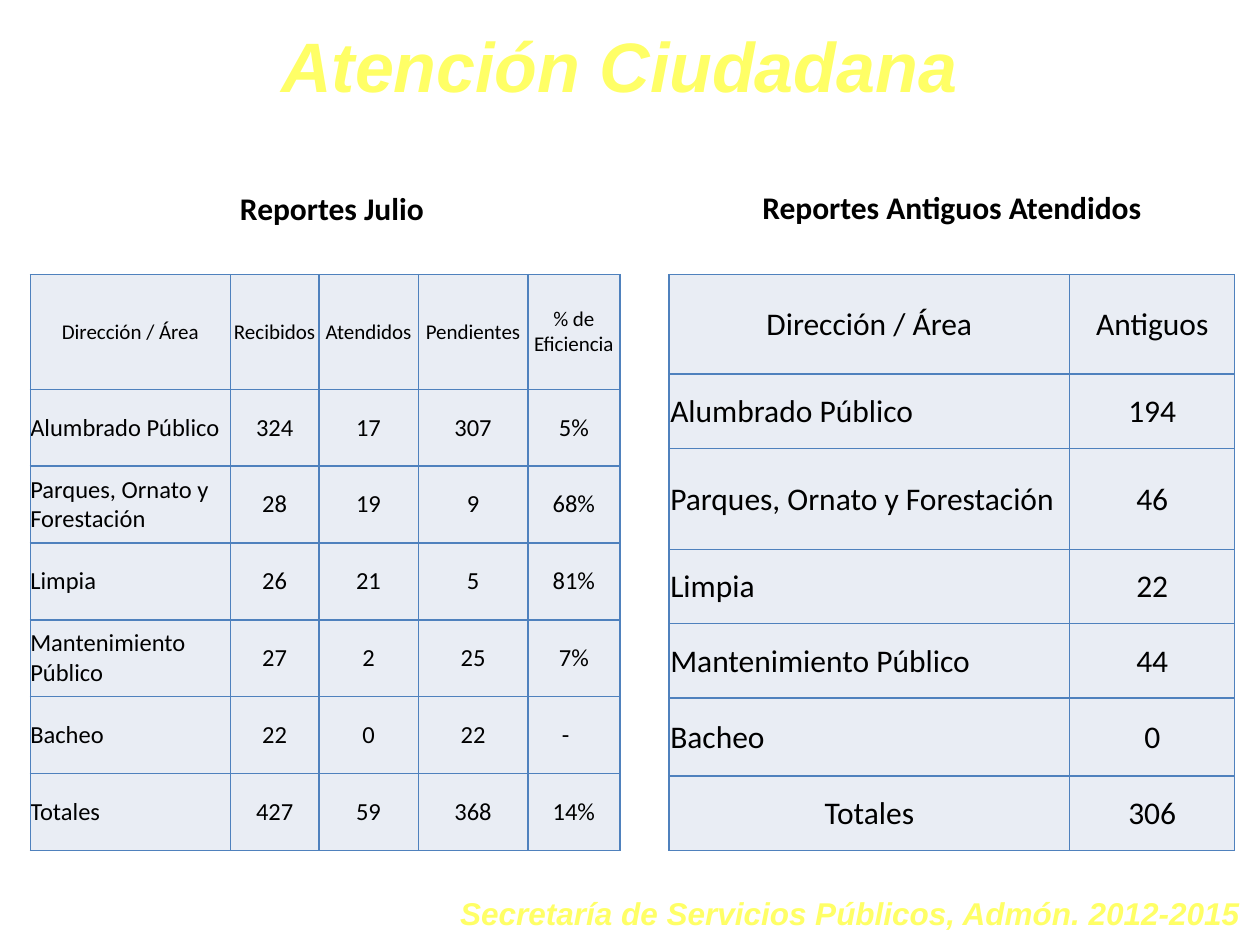
from lxml.etree import SubElement
from pptx import Presentation
from pptx.dml.color import RGBColor
from pptx.enum.text import MSO_ANCHOR, MSO_AUTO_SIZE, PP_ALIGN
from pptx.oxml.ns import qn
from pptx.util import Inches, Pt

COLORS = {"banner": "FFFF66", "text": "000000", "cell": "E9EDF4", "border": "4F81BD"}
BANNER = {"font": "Arial", "color": "banner", "bold": True, "italic": True}
HEADING = {"size": 18, "bold": True}

TEXTS = [
    ("Secretaría de Servicios Públicos, Admón. 2012-2015",
     (3.52, 7.05, 6.45, 0.4), False, {**BANNER, "size": 18}),
    ("Atención Ciudadana", (0.84, 0.13, 8.15, 0.77), True, {**BANNER, "size": 40}),
    ("Reportes Julio", (0.56, 1.45, 4.15, 0.4), True, HEADING),
    ("Reportes Antiguos Atendidos", (5.48, 1.44, 4.15, 0.4), True, HEADING),
]

JULY = {
    "at": (0.24, 2.18),
    "columns": [1.59, 0.7, 0.79, 0.87, 0.73],
    "heights": [0.91] + [0.61] * 6,
    "margins": (0, 0, 0, 0),
    "header_size": 12,
    "body_size": 14,
    "centered_labels": ["Dirección / Área"],
    "rows": [
        ("Dirección / Área", "Recibidos", "Atendidos", "Pendientes", "% de Eficiencia"),
        ("Alumbrado Público", "324", "17", "307", "5%"),
        ("Parques, Ornato y Forestación", "28", "19", "9", "68%"),
        ("Limpia", "26", "21", "5", "81%"),
        ("Mantenimiento Público", "27", "2", "25", "7%"),
        ("Bacheo", "22", "0", "22", "-"),
        ("Totales", "427", "59", "368", "14%"),
    ],
}
OLDER = {
    "at": (5.31, 2.18),
    "columns": [3.18, 1.31],
    "heights": [0.79, 0.59, 0.8, 0.59, 0.59, 0.62, 0.59],
    "margins": (0.01, 0.01, 0.01, 0),
    "header_size": 18,
    "body_size": 18,
    "centered_labels": ["Dirección / Área", "Totales"],
    "rows": [
        ("Dirección / Área", "Antiguos"),
        ("Alumbrado Público", "194"),
        ("Parques, Ornato y Forestación", "46"),
        ("Limpia", "22"),
        ("Mantenimiento Público", "44"),
        ("Bacheo", "0"),
        ("Totales", "306"),
    ],
}
DASH_MARGIN = 0.13


def write(frame, text, size, font="Calibri", color="text", bold=False,
          italic=False, align=PP_ALIGN.CENTER):
    paragraph = frame.paragraphs[0]
    paragraph.alignment = align
    run = paragraph.add_run()
    run.text = text
    run.font.name = font
    run.font.size = Pt(size)
    run.font.bold = bold
    run.font.italic = italic
    run.font.color.rgb = RGBColor.from_string(COLORS[color])


def add_text(slide, text, place, wrap, style):
    frame = slide.shapes.add_textbox(*map(Inches, place)).text_frame
    frame.word_wrap = wrap
    frame.auto_size = MSO_AUTO_SIZE.SHAPE_TO_FIT_TEXT
    write(frame, text, **style)


def add_borders(cell):
    properties = cell._tc.get_or_add_tcPr()
    for side in ("lnL", "lnR", "lnT", "lnB"):
        line = SubElement(properties, qn(f"a:{side}"), w=str(Pt(1)))
        fill = SubElement(line, qn("a:solidFill"))
        SubElement(fill, qn("a:srgbClr"), val=COLORS["border"])


def add_report(slide, report):
    columns, heights = report["columns"], report["heights"]
    place = (*report["at"], sum(columns), sum(heights))
    table = slide.shapes.add_table(len(heights), len(columns), *map(Inches, place)).table
    for column, width in zip(table.columns, columns):
        column.width = Inches(width)
    for row, height in zip(table.rows, heights):
        row.height = Inches(height)
    for r, values in enumerate(report["rows"]):
        for c, value in enumerate(values):
            cell = table.cell(r, c)
            left, top, right, bottom = map(Inches, report["margins"])
            cell.margin_left, cell.margin_top = left, top
            cell.margin_right = Inches(DASH_MARGIN) if value == "-" else right
            cell.margin_bottom = bottom
            cell.vertical_anchor = MSO_ANCHOR.MIDDLE
            add_borders(cell)
            cell.fill.solid()
            cell.fill.fore_color.rgb = RGBColor.from_string(COLORS["cell"])
            centered = c > 0 or value in report["centered_labels"]
            write(cell.text_frame, value,
                  size=report["body_size"] if r else report["header_size"],
                  align=PP_ALIGN.CENTER if centered else PP_ALIGN.LEFT)


def main():
    deck = Presentation()
    deck.slide_width, deck.slide_height = Inches(10), Inches(7.5)
    slide = deck.slides.add_slide(deck.slide_layouts[6])
    for report in (JULY, OLDER):
        add_report(slide, report)
    for text in TEXTS:
        add_text(slide, *text)
    deck.save("out.pptx")


if __name__ == "__main__":
    main()
